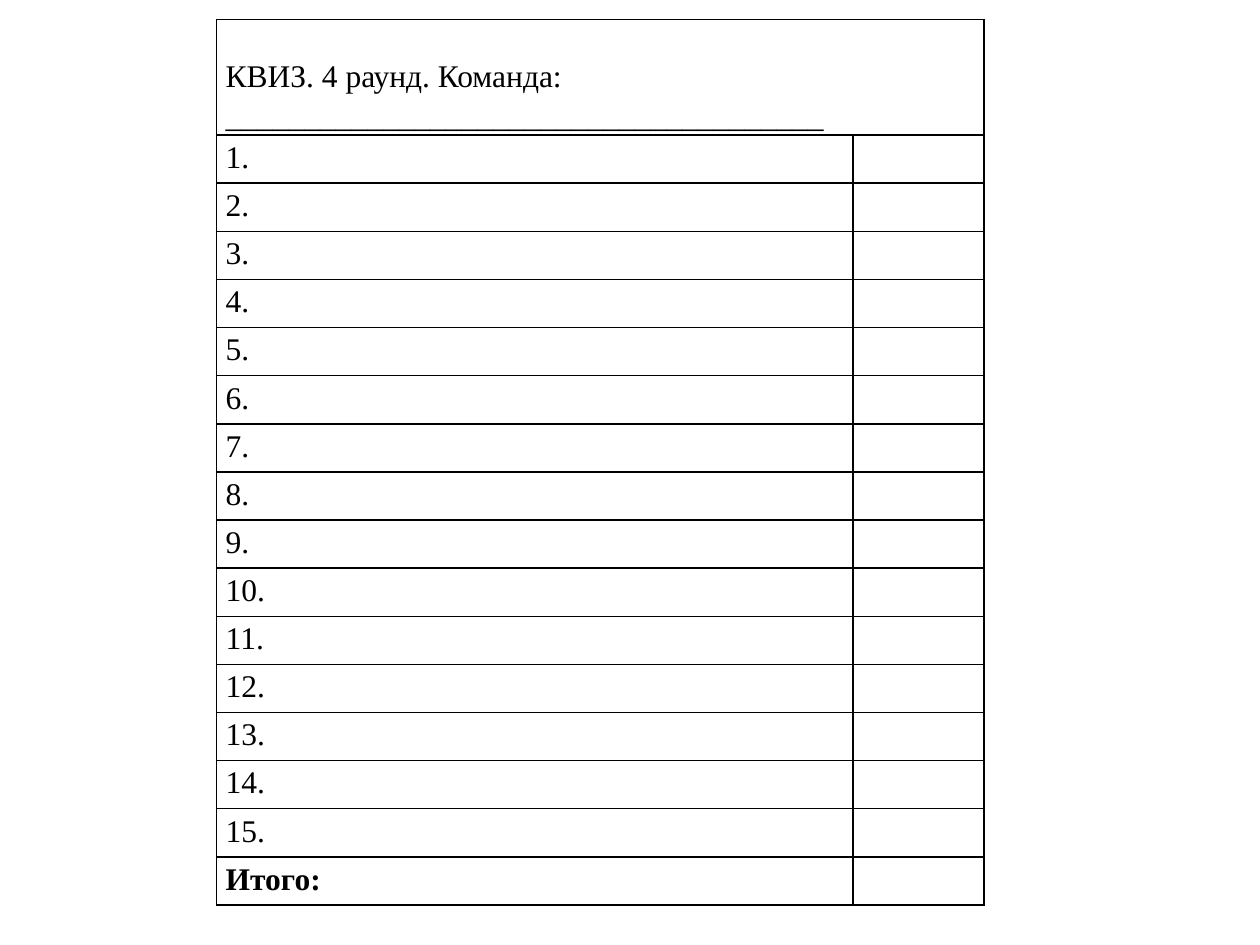
from lxml import etree
from pptx import Presentation
from pptx.dml.color import RGBColor
from pptx.oxml.ns import qn
from pptx.util import Pt

BLACK = RGBColor(0, 0, 0)
FONT_NAME = "Times New Roman"
QUESTION_COUNT = 15
HEADER_HEIGHT = 66
ROW_HEIGHT = 27.5
SCORE_WIDTH = 75


def add_borders(cell):
    properties = cell._tc.get_or_add_tcPr()
    for side in ("a:lnL", "a:lnR", "a:lnT", "a:lnB"):
        line = etree.SubElement(properties, qn(side), w=str(Pt(1)))
        fill = etree.SubElement(line, qn("a:solidFill"))
        etree.SubElement(fill, qn("a:srgbClr"), val=str(BLACK))


def format_cell(cell):
    cell.margin_left = cell.margin_right = Pt(5.4)
    cell.margin_top = cell.margin_bottom = Pt(0)
    add_borders(cell)
    cell.fill.background()


def write_cell(cell, wording, bold=False):
    paragraph = cell.text_frame.paragraphs[0]
    paragraph.line_spacing = 1.15
    run = paragraph.add_run()
    run.text = wording
    run.font.name = FONT_NAME
    run.font.size = Pt(18)
    run.font.bold = bold
    run.font.color.rgb = BLACK


def add_answer_sheet(slide, left, top, width):
    row_count = QUESTION_COUNT + 2
    height = HEADER_HEIGHT + (row_count - 1) * ROW_HEIGHT
    frame = slide.shapes.add_table(
        row_count, 2, Pt(left), Pt(top), Pt(width), Pt(height))
    table = frame.table
    table.first_row = False
    table.horz_banding = False
    table.columns[0].width = Pt(width - SCORE_WIDTH)
    table.columns[1].width = Pt(SCORE_WIDTH)
    for row in table.rows:
        row.height = Pt(ROW_HEIGHT)
        for cell in row.cells:
            format_cell(cell)
    table.rows[0].height = Pt(HEADER_HEIGHT)

    header = table.cell(0, 0)
    header.merge(table.cell(0, 1))
    header.margin_top = Pt(19.5)
    write_cell(header, "КВИЗ. 4 раунд. Команда: " + "_" * 38)
    for number in range(1, QUESTION_COUNT + 1):
        write_cell(table.cell(number, 0), f"{number}.")
    write_cell(table.cell(row_count - 1, 0), "Итого:", bold=True)


def main():
    presentation = Presentation()
    presentation.slide_width = Pt(720)
    presentation.slide_height = Pt(540)
    slide = presentation.slides.add_slide(presentation.slide_layouts[6])
    add_answer_sheet(slide, left=123.6, top=11.2, width=438.8)
    presentation.save("out.pptx")


if __name__ == "__main__":
    main()
